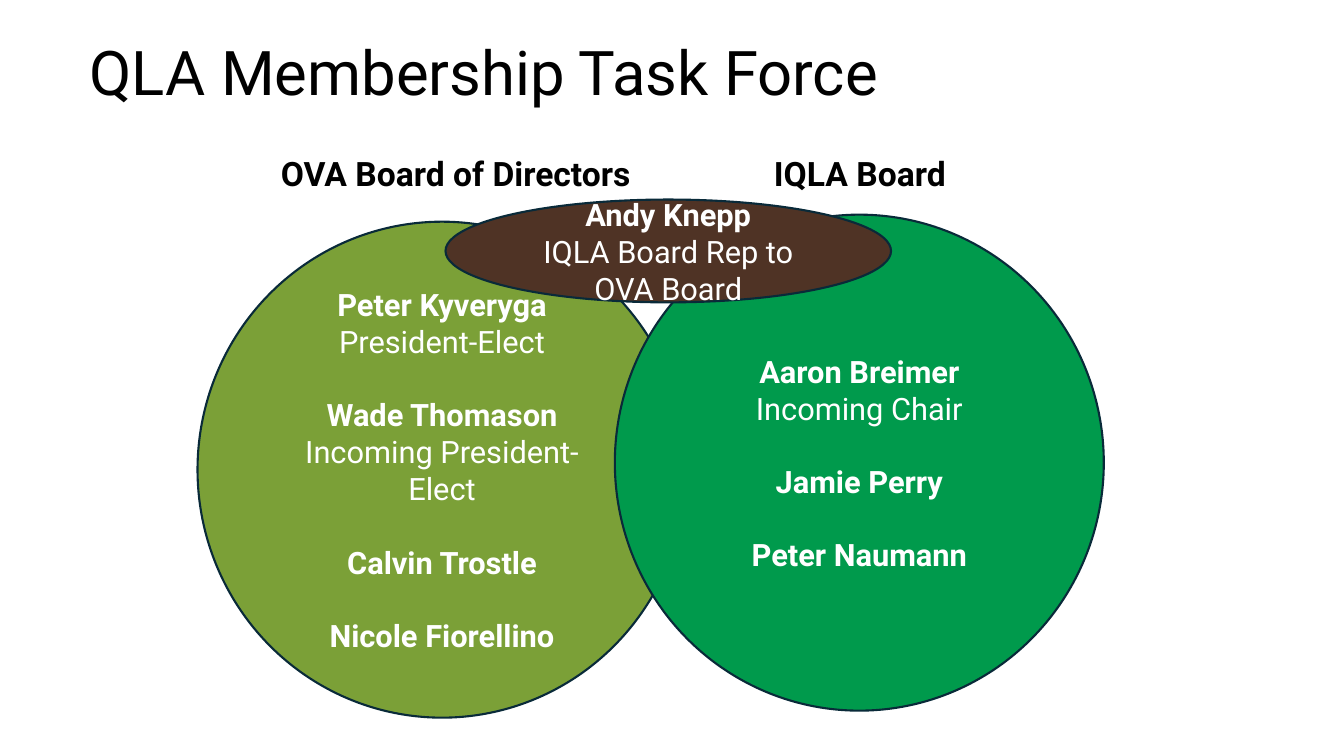
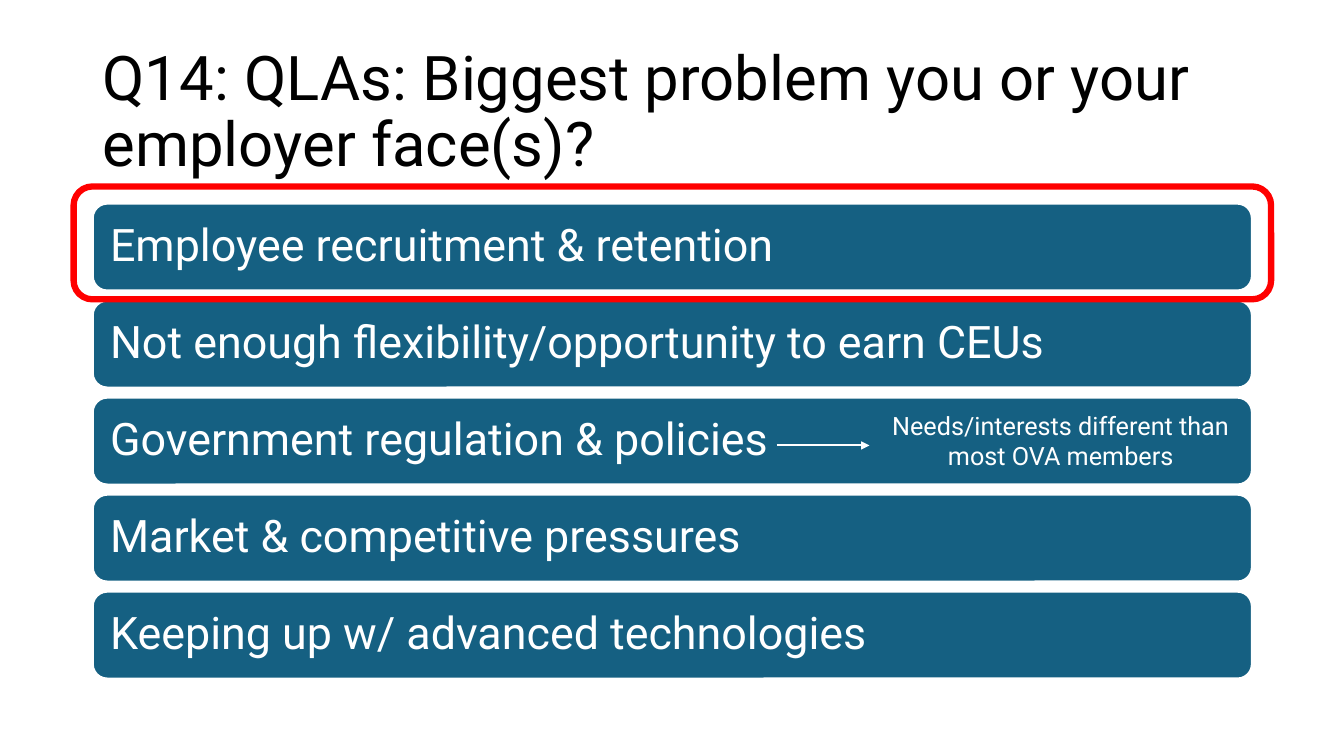
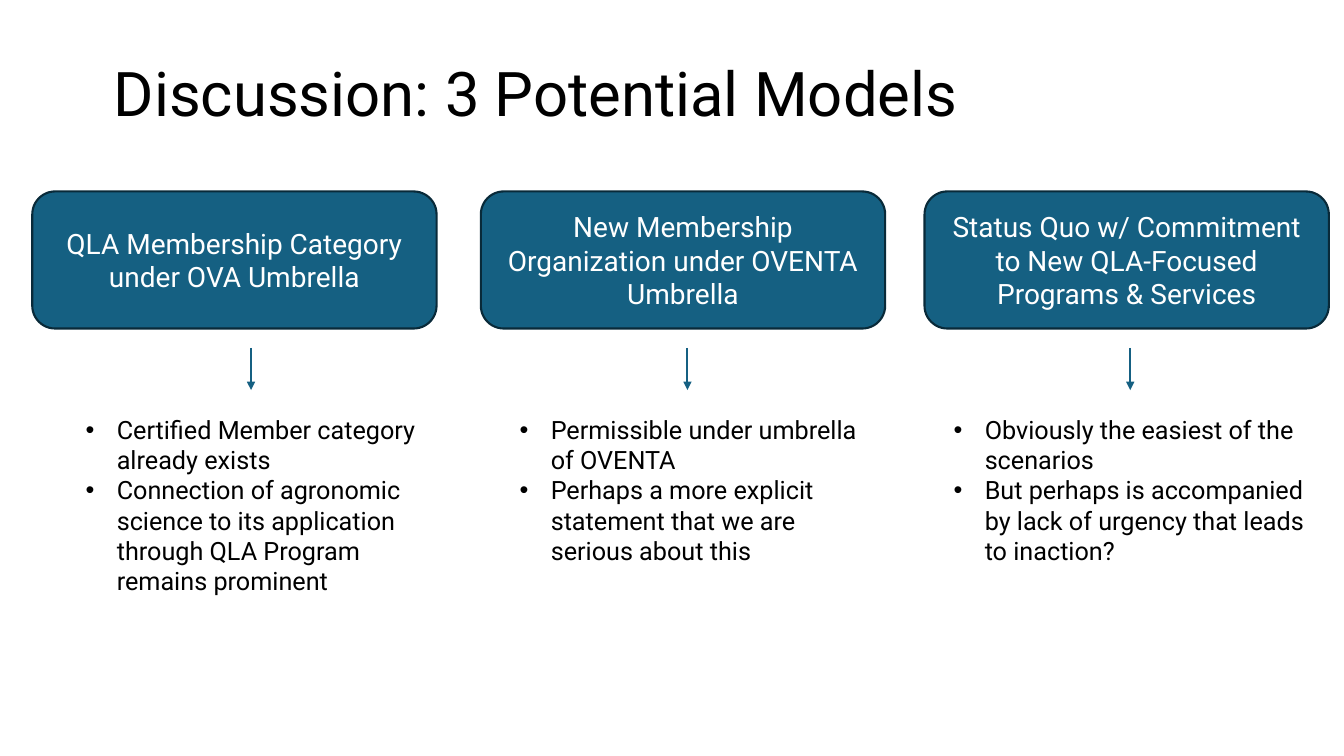
from lxml.etree import SubElement
from pptx import Presentation
from pptx.dml.color import RGBColor
from pptx.enum.shapes import MSO_CONNECTOR, MSO_SHAPE
from pptx.enum.text import MSO_ANCHOR, PP_ALIGN
from pptx.oxml.ns import qn
from pptx.util import Inches, Pt

COLORS = {
    "black": "000000",
    "white": "FFFFFF",
    "blue": "156082",
    "outline": "092A39",
    "olive": "7BA037",
    "green": "009A4C",
    "brown": "4F3325",
    "red": "FF0000",
}
FONT = "Roboto"
CENTER = {"alignment": PP_ALIGN.CENTER}
TITLE_SIZE = (86.25, 19.33)

prs = Presentation()
prs.slide_width = Inches(13.33)
prs.slide_height = Inches(7.5)


def rgb(name):
    return RGBColor.from_string(COLORS[name])


def across(share):
    return round(prs.slide_width * share / 100)


def down(share):
    return round(prs.slide_height * share / 100)


def place(box):
    x, y, w, h = box
    return across(x), down(y), across(w), down(h)


def inside(box, x, y, w, h):
    left, top, width, height = box
    return left + width * x, top + height * y, width * w, height * h


def set_all(obj, values):
    for name, value in values.items():
        setattr(obj, name, value)


def new_slide(title, x, y):
    s = prs.slides.add_slide(prs.slide_layouts[6])
    add_text(s, (x, y, *TITLE_SIZE), [(title, {})], 44,
             para={"line_spacing": 0.9}, anchor=MSO_ANCHOR.MIDDLE)
    return s


def write(tf, lines, size, color="black", para=None, frame=None):
    set_all(tf, {"word_wrap": True, **(frame or {})})
    for i, (text, fmt) in enumerate(lines):
        p = tf.paragraphs[0] if i == 0 else tf.add_paragraph()
        set_all(p, para or {})
        if fmt.get("gap"):
            p.space_before = Pt(size * 1.18)
        r = p.add_run()
        r.text = text
        set_all(r.font, {"name": FONT, "size": Pt(size), "bold": fmt.get("bold", False)})
        r.font.color.rgb = rgb(color)


def add_text(s, box, lines, size, color="black", para=None, anchor=MSO_ANCHOR.TOP):
    sp = s.shapes.add_textbox(*place(box))
    write(sp.text_frame, lines, size, color, para, {"vertical_anchor": anchor})
    return sp


def add_block(s, kind, box, fill=None, line="outline", width=1.5):
    sp = s.shapes.add_shape(kind, *place(box))
    sp.shadow.inherit = False
    if fill:
        sp.fill.solid()
        sp.fill.fore_color.rgb = rgb(fill)
    else:
        sp.fill.background()
    sp.line.color.rgb = rgb(line)
    sp.line.width = Pt(width)
    return sp


def add_label(sp, lines, size, para=CENTER, **frame):
    write(sp.text_frame, lines, size, "white", para,
          {"vertical_anchor": MSO_ANCHOR.MIDDLE, **frame})


def add_arrow(s, x1, y1, x2, y2, color):
    c = s.shapes.add_connector(MSO_CONNECTOR.STRAIGHT,
                               across(x1), down(y1), across(x2), down(y2))
    c.line.color.rgb = rgb(color)
    c.line.width = Pt(1.5)
    SubElement(c.line._get_or_add_ln(), qn("a:tailEnd"), type="triangle")
    SubElement(c._element.spPr, qn("a:effectLst"))


def add_bullets(s, box, items):
    sp = add_text(s, box, [(item, {}) for item in items], 18)
    indent = Inches(0.31)
    for p in sp.text_frame.paragraphs:
        pPr = p._p.get_or_add_pPr()
        pPr.set("marL", str(indent))
        pPr.set("indent", str(-indent))
        SubElement(pPr, qn("a:buFont"), typeface="Arial")
        SubElement(pPr, qn("a:buChar"), char="•")


def add_member_oval(s, box, fill, lines):
    add_label(add_block(s, MSO_SHAPE.OVAL, box, fill), lines, 22)


def add_board(s, x, y, heading, heading_x, fill, members):
    lines = []
    for i, (name, role) in enumerate(members):
        lines.append((name, {"bold": True, "gap": i > 0}))
        if role:
            lines.append((role, {}))
    add_member_oval(s, (x, y, 36.38, 65.6), fill, lines)
    add_text(s, (heading_x, 19.6, 28.95, 6.67), [(heading, {"bold": True})], 24, para=CENTER)


def add_problem_bars(s, box, problems):
    x, y, w, h = box
    gap = 1.33
    bar_h = (h - gap * (len(problems) - 1)) / len(problems)
    bars = [(x, y + i * (bar_h + gap), w, bar_h) for i in range(len(problems))]
    margins = {f"margin_{side}": Inches(0.13) for side in ("left", "right", "top", "bottom")}
    for bar, problem in zip(bars, problems):
        sp = add_block(s, MSO_SHAPE.ROUNDED_RECTANGLE, bar, "blue", "white")
        add_label(sp, [(problem, {})], 32,
                  {"alignment": PP_ALIGN.LEFT, "line_spacing": 0.9}, **margins)
    return bars


def add_highlight(s, bar):
    x, y, w, h = bar
    add_block(s, MSO_SHAPE.ROUNDED_RECTANGLE, (x - 1.42, y - 2.27, w + 2.85, h + 3.43),
              line="red", width=4.5)


def add_side_note(s, bar, note):
    x, y, w, _ = inside(bar, 0.59, 0.55, 0.08, 0)
    add_arrow(s, x, y, x + w, y, "white")
    add_text(s, inside(bar, 0.67, 0.09, 0.33, 0.83), [(note, {})], 18, "white", CENTER)


def add_model(s, card_x, arrow_x, list_x, name, points):
    card = add_block(s, MSO_SHAPE.ROUNDED_RECTANGLE, (card_x, 25.33, 30.08, 18.13), "blue")
    add_label(card, [(name, {})], 20)
    add_arrow(s, arrow_x, 46, arrow_x, 51.6, "blue")
    add_bullets(s, (list_x, 54.13, 28.2, 25.6), points)


def task_force_slide():
    s = new_slide("QLA Membership Task Force", 5.93, 0.27)
    add_board(s, 14.7, 29.33, "OVA Board of Directors", 19.43, "olive", [
        ("Peter Kyveryga", "President-Elect"),
        ("Wade Thomason", "Incoming President-Elect"),
        ("Calvin Trostle", None),
        ("Nicole Fiorellino", None),
    ])
    add_board(s, 45.75, 28.4, "IQLA Board", 49.5, "green", [
        ("Aaron Breimer", "Incoming Chair"),
        ("Jamie Perry", None),
        ("Peter Naumann", None),
    ])
    add_member_oval(s, (33.15, 26.4, 33.15, 13.6), "brown", [
        ("Andy Knepp", {"bold": True}),
        ("IQLA Board Rep to OVA Board", {}),
    ])


def problems_slide():
    s = new_slide("Q14: QLAs: Biggest problem you or your employer face(s)?", 6.9, 5.33)
    bars = add_problem_bars(s, (6.9, 26.93, 86.25, 62.83), [
        "Employee recruitment & retention",
        "Not enough flexibility/opportunity to earn CEUs",
        "Government regulation & policies",
        "Market & competitive pressures",
        "Keeping up w/ advanced technologies",
    ])
    add_highlight(s, bars[0])
    add_side_note(s, bars[2], "Needs/interests different than most OVA members")


def models_slide():
    s = new_slide("Discussion: 3 Potential Models", 7.73, 3.07)
    models = [
        (2.4, 18.68, "QLA Membership Category under OVA Umbrella", [
            "Certified Member category already exists",
            "Connection of agronomic science to its application through QLA Program "
            "remains prominent",
        ]),
        (35.78, 51.15, "New Membership Organization under OVENTA Umbrella", [
            "Permissible under umbrella of OVENTA",
            "Perhaps a more explicit statement that we are serious about this",
        ]),
        (68.79, 84.1, "Status Quo w/ Commitment to New QLA-Focused Programs & Services", [
            "Obviously the easiest of the scenarios",
            "But perhaps is accompanied by lack of urgency that leads to inaction?",
        ]),
    ]
    for i, (card_x, arrow_x, name, points) in enumerate(models):
        add_model(s, card_x, arrow_x, 5.63 + 32.29 * i, name, points)


def main():
    task_force_slide()
    problems_slide()
    models_slide()
    prs.save("out.pptx")


if __name__ == "__main__":
    main()
